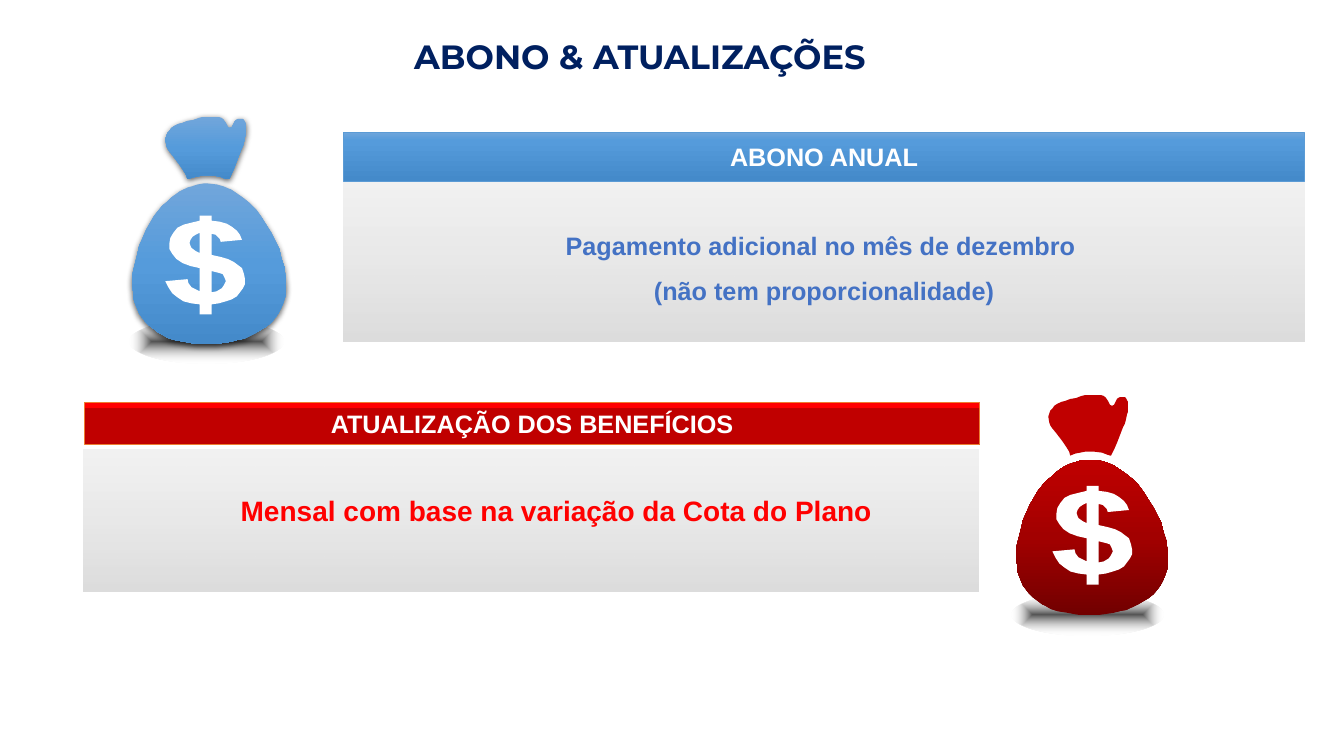
from dataclasses import dataclass

from lxml import etree
from pptx import Presentation
from pptx.dml.color import RGBColor
from pptx.enum.shapes import MSO_SHAPE
from pptx.enum.text import MSO_ANCHOR, MSO_AUTO_SIZE, PP_ALIGN
from pptx.oxml.ns import qn
from pptx.util import Inches, Pt

RECTANGLE, ELLIPSE = MSO_SHAPE.RECTANGLE, MSO_SHAPE.OVAL
TOP, MIDDLE = MSO_ANCHOR.TOP, MSO_ANCHOR.MIDDLE
CENTER, LEFT = PP_ALIGN.CENTER, PP_ALIGN.LEFT
GROW = MSO_AUTO_SIZE.SHAPE_TO_FIT_TEXT
SLIDE_WIDTH, SLIDE_HEIGHT = Inches(13.33), Inches(7.5)

# Outlines in hundredths of an inch, from their own left top corner
BODY = [[
    (75, 0), (84, 1), (91, 3), (98, 6), (104, 10), (111, 15), (117, 20), (123, 26), (128, 33),
    (133, 41), (138, 49), (142, 57), (146, 65), (148, 74), (151, 83), (152, 92), (153, 99),
    (153, 106), (152, 112), (150, 118), (148, 123), (145, 129), (142, 133), (138, 138),
    (133, 142), (128, 145), (123, 148), (117, 151), (111, 154), (105, 155), (98, 157),
    (91, 158), (84, 159), (63, 159), (57, 158), (52, 157), (46, 156), (41, 155), (35, 153),
    (30, 150), (26, 148), (21, 144), (17, 141), (13, 137), (10, 133), (7, 129), (5, 124),
    (3, 119), (1, 113), (1, 107), (0, 101), (0, 94), (1, 87), (3, 79), (5, 71), (7, 62),
    (11, 53), (14, 46), (18, 39), (22, 32), (26, 27), (30, 22), (35, 18), (39, 14), (43, 11),
    (47, 8), (51, 6), (55, 4), (59, 3), (62, 2), (65, 1), (71, 0)]]
NECK = [[
    (46, 0), (53, 0), (56, 1), (58, 3), (60, 6), (61, 8), (62, 10), (64, 11), (66, 10), (67, 8),
    (69, 4), (70, 3), (72, 2), (77, 2), (78, 3), (79, 5), (80, 7), (80, 17), (79, 20), (78, 25),
    (77, 29), (75, 33), (72, 41), (69, 49), (66, 56), (64, 60), (63, 62), (62, 62), (59, 61),
    (54, 59), (46, 58), (37, 58), (32, 59), (27, 60), (22, 62), (21, 58), (18, 53), (14, 47),
    (8, 39), (4, 34), (2, 31), (1, 28), (0, 22), (1, 19), (2, 16), (4, 14), (6, 11), (9, 9),
    (13, 7), (17, 6), (22, 4), (28, 3), (33, 1), (37, 0)]]
DOLLAR = [
    [(46, 55), (46, 76), (51, 75), (56, 72), (58, 69), (60, 65), (59, 62), (57, 58), (54, 57),
     (50, 56)],
    [(34, 17), (30, 19), (27, 21), (25, 24), (24, 27), (25, 30), (26, 32), (30, 35), (34, 37)],
    [(34, 0), (46, 0), (46, 5), (54, 6), (61, 8), (66, 11), (71, 15), (74, 19), (76, 24),
     (55, 26), (54, 23), (50, 19), (46, 18), (46, 39), (55, 41), (62, 43), (68, 46), (72, 49),
     (76, 52), (78, 58), (79, 63), (79, 68), (77, 72), (74, 76), (71, 80), (66, 83), (60, 85),
     (53, 87), (46, 88), (46, 98), (34, 98), (34, 88), (26, 87), (18, 85), (12, 81), (7, 77),
     (3, 71), (0, 65), (22, 63), (23, 67), (26, 71), (30, 73), (34, 75), (34, 52), (25, 50),
     (17, 47), (11, 43), (7, 38), (4, 33), (4, 28), (5, 22), (8, 17), (12, 12), (18, 9),
     (26, 7), (34, 5)]]


@dataclass
class Frame:
    """Place and size in percent of the slide."""
    left: float
    top: float
    width: float
    height: float

    def lengths(self) -> tuple:
        return (int(SLIDE_WIDTH * self.left / 100), int(SLIDE_HEIGHT * self.top / 100),
                int(SLIDE_WIDTH * self.width / 100), int(SLIDE_HEIGHT * self.height / 100))


@dataclass
class Gradient:
    """Stops are position, colour and opacity; no angle means from the centre outwards."""
    stops: list
    angle: int | None


@dataclass
class Label:
    lines: list
    size: int
    color: str
    font: str = "Arial"
    align: int = CENTER
    anchor: int = MIDDLE
    level: int = 0
    spacing: float | None = None
    insets: tuple = (0.15, 0.05)


@dataclass
class Bag:
    ground: Frame
    body: Frame
    neck: Frame
    dollar: Frame
    body_fill: Gradient
    neck_fill: Gradient | str
    raised: bool


@dataclass
class Card:
    panel: Frame
    header: Frame
    header_fill: Gradient
    border: str
    title: Label
    message: Label


GROUND = Gradient([(0, "0D0D0D", 71), (100, "FFFFFF", 0)], None)
GREY = Gradient([(0, "B7B7B7", 48), (100, "D9D9D9", 34)], 270)
BLUE = Gradient([(0, "71A6DB", 100), (50, "559BDB", 100), (100, "448ACA", 100)], 90)
BLUE_BAR = Gradient([(0, "71A6DB", 100), (17, "559BDB", 100), (100, "448ACA", 100)], 90)
RED = Gradient([(0, "720000", 100), (50, "A20000", 100), (100, "C00000", 100)], 270)
RED_BAR = Gradient([(13, "FF0000", 100), (15, "C00000", 100)], 90)

BAGS = [
    Bag(Frame(9.68, 42.27, 11.4, 5.87), Frame(9.83, 24.27, 11.48, 21.2),
        Frame(12.3, 15.47, 6, 8.27), Frame(12.3, 28.53, 5.93, 13.07), BLUE, BLUE, True),
    Bag(Frame(75.3, 78.53, 11.25, 5.6), Frame(75.6, 60.8, 11.33, 20.53),
        Frame(78, 52.27, 5.93, 8), Frame(78.3, 64.27, 5.93, 13.07), RED, "C00000", False),
]
CARDS = [
    Card(Frame(25.58, 23.6, 71.48, 21.6), Frame(25.58, 17.47, 71.48, 6.53), BLUE_BAR, "5B9BD5",
         Label(["ABONO ANUAL"], 18, "FFFFFF"),
         Label(["Pagamento adicional no mês de dezembro ", "(não tem proporcionalidade)"],
               18, "4472C4", spacing=1.5, insets=(0.15, 0.15))),
    Card(Frame(6.23, 59.47, 66.6, 18.8), Frame(6.3, 53.2, 66.6, 5.6), RED_BAR, "ED7D31",
         Label(["ATUALIZAÇÃO DOS BENEFÍCIOS"], 18, "FFFFFF"),
         Label(["Mensal com base na variação da Cota do Plano"], 20, "FF0000",
               anchor=TOP, level=1, insets=(0.15, 0.44))),
]


def rgb(color: str) -> RGBColor:
    return RGBColor.from_string(color)


def add_element(parent, tag: str, **attributes):
    return etree.SubElement(parent, qn(tag), {key: str(val) for key, val in attributes.items()})


def paint(shape, fill, border: str | None = None) -> None:
    shape.shadow.inherit = False
    if isinstance(fill, str):
        shape.fill.solid()
        shape.fill.fore_color.rgb = rgb(fill)
    else:
        shape.fill.gradient()
        gradient = shape._element.spPr.find(qn("a:gradFill"))
        for child in list(gradient):
            gradient.remove(child)
        stops = add_element(gradient, "a:gsLst")
        for position, color, opacity in fill.stops:
            stop = add_element(stops, "a:gs", pos=position * 1000)
            tone = add_element(stop, "a:srgbClr", val=color)
            if opacity < 100:
                add_element(tone, "a:alpha", val=opacity * 1000)
        if fill.angle is None:
            centre = add_element(gradient, "a:path", path="shape")
            add_element(centre, "a:fillToRect", l=50000, t=50000, r=50000, b=50000)
        else:
            add_element(gradient, "a:lin", ang=fill.angle * 60000, scaled=0)
    if border:
        shape.line.color.rgb = rgb(border)
        shape.line.width = Pt(0.5)
    else:
        shape.line.fill.background()


def write(box, label: Label) -> None:
    text = box.text_frame
    text.text = "\n".join(label.lines)
    text.word_wrap = True
    text.vertical_anchor = label.anchor
    side, edge = (Inches(inset) for inset in label.insets)
    text.margin_left = text.margin_right = side
    text.margin_top = text.margin_bottom = edge
    for para in text.paragraphs:
        para.alignment, para.level, para.line_spacing = label.align, label.level, label.spacing
        for span in para.runs:
            span.font.name, span.font.size, span.font.bold = label.font, Pt(label.size), True
            span.font.color.rgb = rgb(label.color)


def draw_outline(page, contours: list, frame: Frame, fill, raised: bool = False) -> None:
    left, top, width, height = frame.lengths()
    points = [point for contour in contours for point in contour]
    scale = (width / max(x for x, _ in points), height / max(y for _, y in points))
    builder = page.shapes.build_freeform(*contours[0][0], scale=scale)
    for number, contour in enumerate(contours):
        if number:
            builder.move_to(*contour[0])
        builder.add_line_segments(contour[1:], close=True)
    shape = builder.convert_to_shape(left, top)
    paint(shape, fill)
    if raised:
        effects = shape._element.spPr.find(qn("a:effectLst"))
        shadow = add_element(effects, "a:outerShdw", blurRad=Pt(4.5), dist=Pt(1.5),
                             dir=5400000, rotWithShape=0)
        add_element(add_element(shadow, "a:srgbClr", val="000000"), "a:alpha", val=63000)


def draw_bag(page, bag: Bag) -> None:
    paint(page.shapes.add_shape(ELLIPSE, *bag.ground.lengths()), GROUND)
    draw_outline(page, BODY, bag.body, bag.body_fill, bag.raised)
    draw_outline(page, NECK, bag.neck, bag.neck_fill, bag.raised)
    draw_outline(page, DOLLAR, bag.dollar, "FFFFFF")


def draw_card(page, card: Card) -> None:
    for frame, fill, border, label in ((card.panel, GREY, None, card.message),
                                       (card.header, card.header_fill, card.border, card.title)):
        box = page.shapes.add_shape(RECTANGLE, *frame.lengths())
        paint(box, fill, border)
        write(box, label)


def main() -> None:
    deck = Presentation()
    deck.slide_width, deck.slide_height = SLIDE_WIDTH, SLIDE_HEIGHT
    page = deck.slides.add_slide(deck.slide_layouts[6])

    # Heading
    heading = page.shapes.add_textbox(*Frame(30.08, 4.13, 37.43, 6.67).lengths())
    write(heading, Label(["ABONO & ATUALIZAÇÕES"], 24, "002060", "Montserrat", LEFT, TOP,
                         insets=(0.1, 0.05)))
    heading.text_frame.word_wrap = False
    heading.text_frame.auto_size = GROW

    # Money bags and their cards
    for bag in BAGS:
        draw_bag(page, bag)
    for card in CARDS:
        draw_card(page, card)
    deck.save("out.pptx")


if __name__ == "__main__":
    main()
